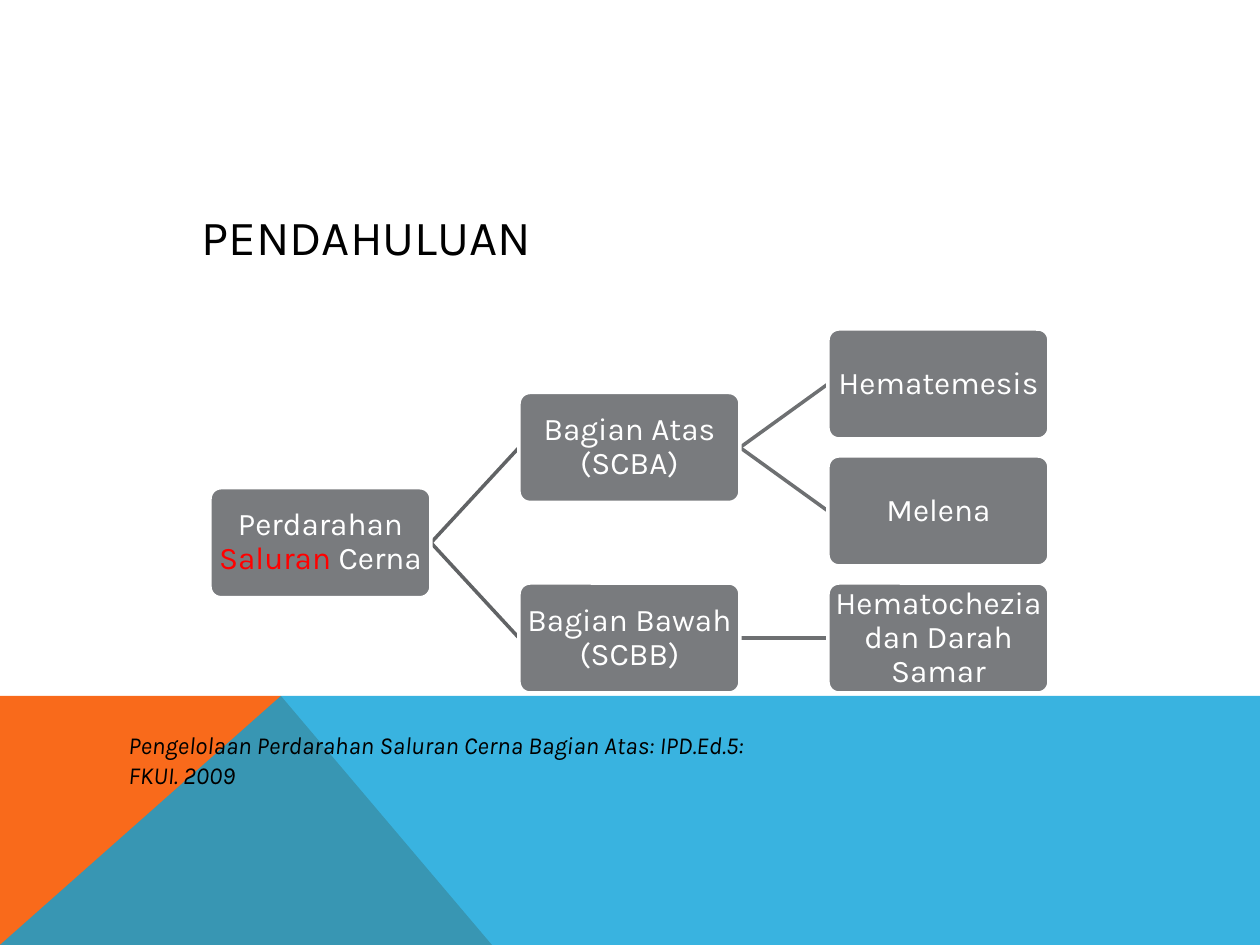
from pptx import Presentation, util as u
from pptx.dml.color import RGBColor
from pptx.enum import shapes, text
from pptx.oxml.ns import qn
from lxml import etree

PX = 914400 / 126
BLACK = RGBColor(0x00, 0x00, 0x00)
WHITE = RGBColor(0xFF, 0xFF, 0xFF)
RED = RGBColor(0xFF, 0x00, 0x00)
ORANGE = RGBColor(0xF9, 0x6A, 0x1B)
BLUE = RGBColor(0x08, 0xA1, 0xD9)
GREY = RGBColor(0x79, 0x7B, 0x7E)
DARK = RGBColor(0x61, 0x63, 0x65)
MID = RGBColor(0x6E, 0x70, 0x72)


def px(*nums):
    return [u.Emu(round(n * PX)) for n in nums]


def write(shape, *runs, size, color=BLACK, align="LEFT", anchor="TOP",
          italic=None, inset=None, lead=None):
    """Fill the shape with one paragraph; a run is text or (text, colour)."""
    frame = shape.text_frame
    frame.word_wrap = True
    frame.vertical_anchor = text.MSO_ANCHOR[anchor]
    if inset is not None:
        frame.margin_left = frame.margin_right = px(inset)[0]
        frame.margin_top = frame.margin_bottom = px(inset)[0]
    para = frame.paragraphs[0]
    para.alignment = text.PP_ALIGN[align]
    para.line_spacing = lead
    for item in runs:
        words, tint = (item, color) if isinstance(item, str) else item
        run = para.add_run()
        run.text = words
        run.font.name = "Karla"
        run.font.size = u.Pt(size)
        run.font.italic = italic
        run.font.color.rgb = tint


deck = Presentation()
deck.slide_width, deck.slide_height = px(1260, 945)
slide = deck.slides.add_slide(deck.slide_layouts[5])
items = slide.shapes

# Colour bands along the foot
bands = [
    (ORANGE, 100, [(0, 945), (0, 696), (281, 696), (492, 945)]),
    (BLUE, 80, [(0, 945), (281, 696), (1260, 696), (1260, 945)]),
]
for color, alpha, points in bands:
    pen = items.build_freeform(*points[0], scale=PX)
    pen.add_line_segments(points[1:], close=True)
    band = pen.convert_to_shape()
    band.shadow.inherit = False
    band.fill.solid()
    band.fill.fore_color.rgb = color
    band.line.fill.background()
    if alpha < 100:
        tone = band.fill._xPr.find(qn("a:solidFill"))[0]
        etree.SubElement(tone, qn("a:alpha"), val=str(alpha * 1000))

title = items.title
title.left, title.top, title.width, title.height = px(189, 199, 882, 73)
write(title, "PENDAHULUAN", size=28, anchor="MIDDLE")

# Tree: each parent sits midway between its children
LEFT, TOP, WIDE, HIGH = 210, 329, 221, 110
COL, ROW = 309, 127
nodes = {
    "root": (0, 1.25, ["Perdarahan ", ("Saluran ", RED), "Cerna"]),
    "upper": (1, 0.5, ["Bagian Atas (SCBA)"]),
    "vomit": (2, 0, ["Hematemesis"]),
    "stool": (2, 1, ["Melena"]),
    "lower": (1, 2, ["Bagian Bawah (SCBB)"]),
    "fresh": (2, 2, ["Hematochezia dan Darah Samar"]),
}
boxes = {}
for name, (col, row, runs) in nodes.items():
    box = items.add_shape(
        shapes.MSO_SHAPE.ROUNDED_RECTANGLE,
        *px(LEFT + col * COL, TOP + row * ROW, WIDE, HIGH))
    box.adjustments[0] = 0.1
    box.shadow.inherit = False
    box.fill.solid()
    box.fill.fore_color.rgb = GREY
    box.line.color.rgb = WHITE
    box.line.width = u.Pt(2)
    write(box, *runs, size=18, color=WHITE, align="CENTER",
          anchor="MIDDLE", inset=1, lead=0.9)
    boxes[name] = box

links = [
    ("root", "upper", DARK), ("root", "lower", DARK),
    ("upper", "vomit", MID), ("upper", "stool", MID),
    ("lower", "fresh", MID),
]
for start, end, color in links:
    link = items.add_connector(shapes.MSO_CONNECTOR.STRAIGHT, 0, 0, 0, 0)
    link.begin_connect(boxes[start], 3)
    link.end_connect(boxes[end], 1)
    link.line.color.rgb = color
    link.line.width = u.Pt(2)
    etree.SubElement(link._element.spPr, qn("a:effectLst"))
    # Lines lie beneath the boxes, so the white rims trim their ends
    boxes["root"]._element.addprevious(link._element)

source = items.add_textbox(*px(116, 724, 693, 43))
write(source, "Pengelolaan Perdarahan Saluran Cerna Bagian Atas: "
      "IPD.Ed.5: FKUI. 2009", size=14, italic=True)

deck.save("out.pptx")
